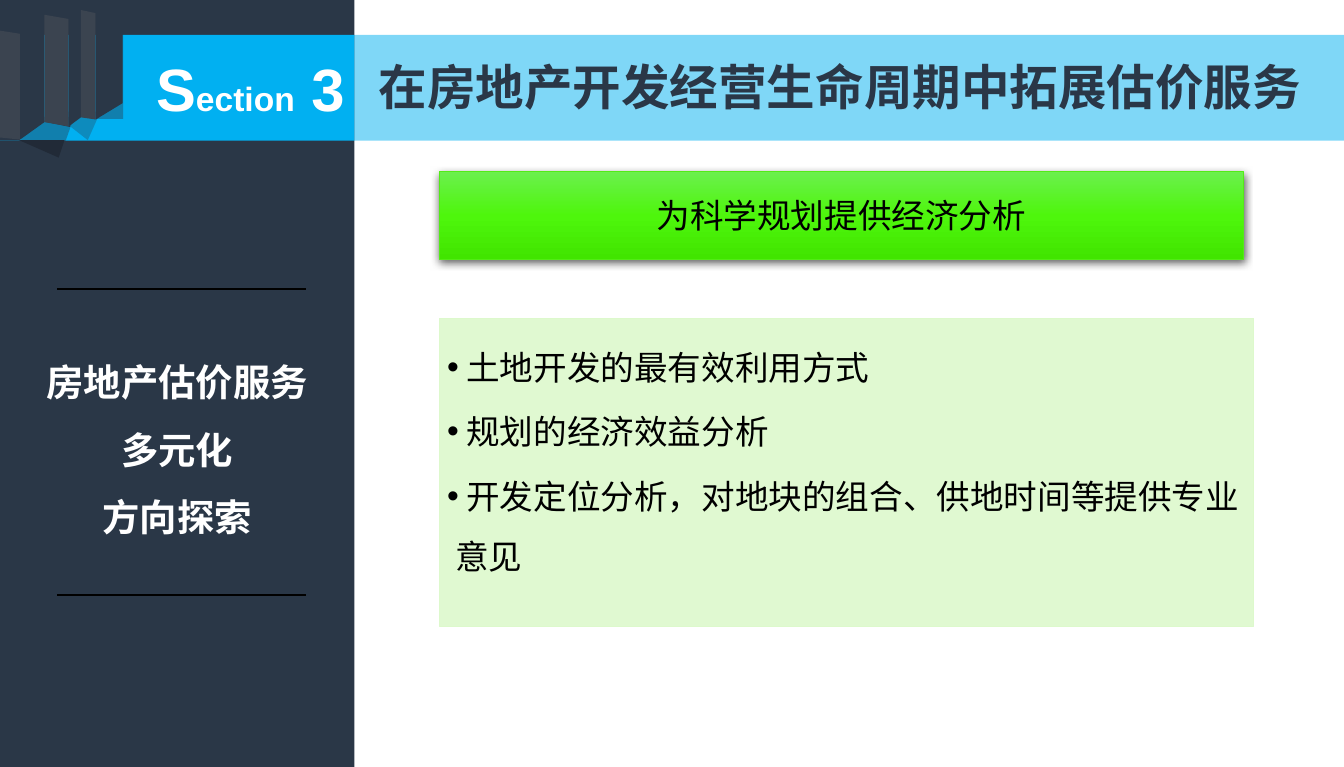
"""Build the section 3 slide on valuation services in the property development cycle."""
from lxml.etree import SubElement
from pptx import Presentation
from pptx.dml.color import RGBColor
from pptx.enum.shapes import MSO_CONNECTOR, MSO_SHAPE
from pptx.enum.text import MSO_ANCHOR, PP_ALIGN
from pptx.oxml import parse_xml
from pptx.oxml.ns import nsdecls, qn
from pptx.util import Cm, Pt

NAVY = RGBColor(0x2A, 0x37, 0x47)
DEEP = RGBColor(0x21, 0x2A, 0x37)
SLATE = RGBColor(0x3B, 0x44, 0x50)
SKY = RGBColor(0x01, 0xB0, 0xF1)
GREEN = RGBColor(0x4E, 0xF6, 0x0C)
GREEN_LINE = RGBColor(0x53, 0xEB, 0x17)
GREEN_STOPS = [(0, "6BF04D"), (50000, str(GREEN)), (100000, "41E500")]
MINT = RGBColor(0xDD, 0xF9, 0xCC)
BLACK = RGBColor(0, 0, 0)
WHITE = RGBColor(255, 255, 255)
CJK = "Noto Sans CJK SC"
LATIN = "Arial"

WIDTH, HEIGHT = 25.4, 14.5
SIDE = 6.7
BAND_TOP, BAND_H = 0.66, 2
CONTENT_LEFT = 8.3

FOLDS = [
    (SLATE, [(0, 0.58), (0.38, 0.64), (0.38, 2.64), (0, 2.6)]),
    (NAVY, [(0.38, 0.64), (0.84, 0.28), (0.84, 2.31), (0.38, 2.64)]),
    (SLATE, [(0.84, 0.28), (1.3, 0.36), (1.3, 2.39), (0.84, 2.31)]),
    (NAVY, [(1.3, 0.36), (1.53, 0.19), (1.53, 2.22), (1.3, 2.39)]),
    (SLATE, [(1.53, 0.19), (1.81, 0.25), (1.81, 2.26), (1.53, 2.22)]),
    (NAVY, [(1.81, 0.25), (2.16, 0), (2.32, 0), (2.32, 1.95), (1.81, 2.26)]),
    (DEEP, [(0.36, 2.65), (1.22, 2.65), (1.11, 2.98)]),
]
FOLD_SHADOWS = [
    (30, [(0.97, 2.11), (1.9, 2.11), (1.66, 2.65)]),
    (40, [(0, 2.21), (1.4, 2.21), (1.02, 3.3)]),
]


class Deck:
    """Hold the text style and the current slide."""

    def __init__(self):
        self.prs = Presentation()
        self.prs.slide_width, self.prs.slide_height = Cm(WIDTH), Cm(HEIGHT)
        self.s = self.prs.slides.add_slide(self.prs.slide_layouts[5])

    def paint(self, sp, color, alpha=100, line=None):
        sp.shadow.inherit = False
        sp.fill.solid()
        sp.fill.fore_color.rgb = color
        if alpha < 100:
            clr = sp._element.spPr.find(".//" + qn("a:srgbClr"))
            SubElement(clr, qn("a:alpha"), val=str(alpha * 1000))
        if line is None:
            sp.line.fill.background()
        else:
            sp.line.color.rgb = line
            sp.line.width = Pt(0.5)
        return sp

    def rect(self, x, y, w, h, color, alpha=100, line=None):
        sp = self.s.shapes.add_shape(MSO_SHAPE.RECTANGLE, Cm(x), Cm(y), Cm(w), Cm(h))
        return self.paint(sp, color, alpha, line)

    def polygon(self, points, color, alpha=100):
        pts = [(Cm(x), Cm(y)) for x, y in points]
        fb = self.s.shapes.build_freeform(*pts[0])
        fb.add_line_segments(pts[1:], close=True)
        return self.paint(fb.convert_to_shape(), color, alpha)

    def line(self, x1, y1, x2, y2, color, width):
        cx = self.s.shapes.add_connector(
            MSO_CONNECTOR.STRAIGHT, Cm(x1), Cm(y1), Cm(x2), Cm(y2))
        cx.line.color.rgb = color
        cx.line.width = Pt(width)
        SubElement(cx._element.spPr, qn("a:effectLst"))

    def button(self, x, y, w, h):
        sp = self.rect(x, y, w, h, GREEN, line=GREEN_LINE)
        stops = "".join(f'<a:gs pos="{pos}"><a:srgbClr val="{val}"/></a:gs>'
                        for pos, val in GREEN_STOPS)
        pr = sp._element.spPr
        pr.replace(pr.find(qn("a:solidFill")), parse_xml(
            f'<a:gradFill {nsdecls("a")}><a:gsLst>{stops}</a:gsLst>'
            '<a:lin ang="5400000" scaled="0"/></a:gradFill>'))
        pr.find(qn("a:effectLst")).append(parse_xml(
            f'<a:outerShdw {nsdecls("a")} blurRad="{Pt(4.5)}" dist="{Pt(1.5)}" dir="5400000">'
            '<a:srgbClr val="000000"><a:alpha val="63000"/></a:srgbClr></a:outerShdw>'))
        return sp

    def textbox(self, x, y, w, h):
        return self.s.shapes.add_textbox(Cm(x), Cm(y), Cm(w), Cm(h))

    def title(self, x, y, w, h):
        sp = self.s.shapes.title
        sp.left, sp.top, sp.width, sp.height = Cm(x), Cm(y), Cm(w), Cm(h)
        self.s.shapes._spTree.append(sp._element)
        return sp

    def text(self, sp, paragraphs, color, font=CJK, bold=False, align=PP_ALIGN.LEFT,
             anchor=MSO_ANCHOR.TOP, spacing=None, after=0, bullet=False):
        tf = sp.text_frame
        tf.word_wrap = True
        tf.vertical_anchor = anchor
        for i, runs in enumerate(paragraphs):
            p = tf.add_paragraph() if i else tf.paragraphs[0]
            p.alignment, p.line_spacing, p.space_after = align, spacing, Pt(after)
            if bullet:
                pr = p._p.get_or_add_pPr()
                pr.set("marL", str(Cm(0.15)))
                pr.set("indent", str(-Cm(0.15)))
                SubElement(pr, qn("a:buFont"), typeface=LATIN)
                SubElement(pr, qn("a:buChar"), char="•")
            for content, size in runs:
                r = p.add_run()
                r.text = content
                r.font.name, r.font.size, r.font.bold = font, Pt(size), bold
                r.font.color.rgb = color
                SubElement(r._r.get_or_add_rPr(), qn("a:ea"), typeface=font)
        return tf


def main():
    deck = Deck()
    deck.rect(0, 0, SIDE, HEIGHT, NAVY)
    deck.rect(0, BAND_TOP, SIDE, BAND_H, SKY)
    deck.rect(SIDE, BAND_TOP, WIDTH - SIDE, BAND_H, SKY, 50)
    deck.rect(1.83, 0.25, 0.5, 2, NAVY, 40)
    deck.rect(0, 2.39, 0.38, 0.27, NAVY)
    deck.line(1.32, 2.39, 0.84, 2.29, NAVY, 0.5)
    for alpha, points in FOLD_SHADOWS:
        deck.polygon(points, NAVY, alpha)
    for color, points in FOLDS:
        deck.polygon(points, color)
    for y in (5.46, 11.25):
        deck.line(1.08, y, 5.79, y, BLACK, 0.75)

    topic = ["房地产估价服务", "多元化", "方向探索"]
    deck.text(deck.textbox(0, 6.25, SIDE, 3.96), [[(t, 20)] for t in topic],
              WHITE, bold=True, align=PP_ALIGN.CENTER, spacing=1.5)
    deck.text(deck.textbox(2.7, 0.86, 6.6, 1.63), [[("S", 32), ("ection", 18), (" 3", 32)]],
              WHITE, LATIN, bold=True)
    deck.text(deck.title(6.9, 0.94, 18.5, 1.37), [[("在房地产开发经营生命周期中拓展估价服务", 26)]],
              NAVY, bold=True, anchor=MSO_ANCHOR.MIDDLE)

    deck.text(deck.button(CONTENT_LEFT, 3.25, 15.2, 1.65), [[("为科学规划提供经济分析", 18)]],
              BLACK, align=PP_ALIGN.CENTER, anchor=MSO_ANCHOR.MIDDLE)
    services = [" 土地开发的最有效利用方式", " 规划的经济效益分析",
                " 开发定位分析，对地块的组合、供地时间等提供专业意见"]
    panel = deck.rect(CONTENT_LEFT, 6.02, 15.4, 5.82, MINT, 90, MINT)
    tf = deck.text(panel, [[(t, 18)] for t in services], BLACK,
                   spacing=1.5, after=2.2, bullet=True)
    tf.margin_left, tf.margin_top = Cm(0.15), Cm(0.15)
    deck.prs.save("out.pptx")


if __name__ == "__main__":
    main()
